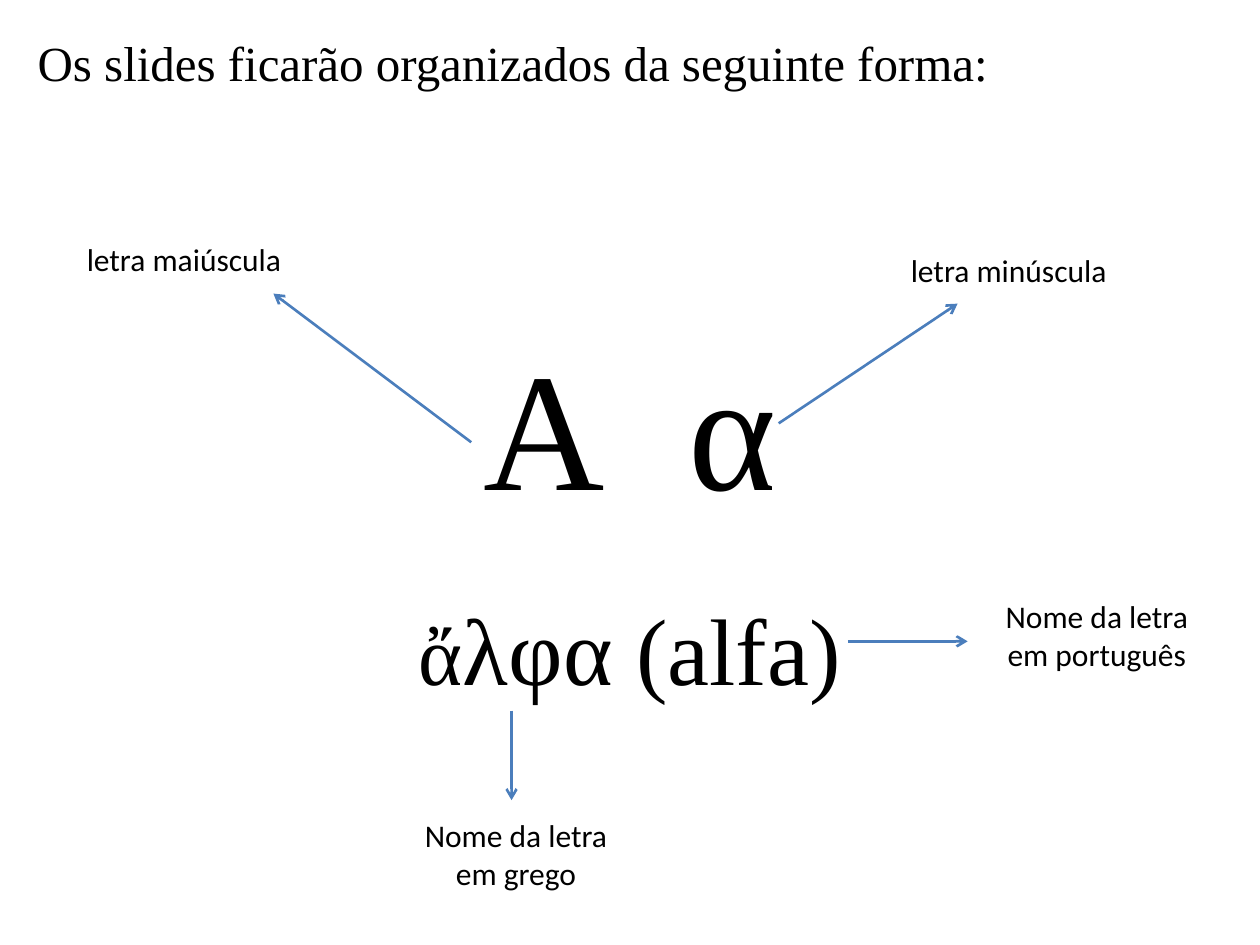
from dataclasses import dataclass

from lxml import etree
from pptx import Presentation
from pptx.dml.color import RGBColor
from pptx.enum import shapes, text
from pptx.oxml import ns
from pptx.util import Inches, Pt


@dataclass(frozen=True)
class Theme:
    ink: RGBColor = RGBColor(0x00, 0x00, 0x00)
    blue: RGBColor = RGBColor(0x4B, 0x7E, 0xBC)
    serif: str = "Times New Roman"
    sans: str = "Calibri"
    label: int = 18
    title: int = 28
    accent: int = 48
    name: int = 54
    letter: int = 96


theme = Theme()
align = text.PP_ALIGN

deck = Presentation()
deck.slide_width, deck.slide_height = Inches(10), Inches(7.5)
slide = deck.slides.add_slide(deck.slide_layouts[6])


def add_box(left, top, width, height, wrap=True):
    box = slide.shapes.add_textbox(*map(Inches, (left, top, width, height)))
    box.text_frame.word_wrap = wrap
    return box.text_frame


def add_run(para, words, size, face):
    run = para.add_run()
    run.text = words
    run.font.size = Pt(size)
    run.font.name = face
    run.font.color.rgb = theme.ink
    return run


# Letter pair and its name
frame = add_box(0.5, 1.75, 9, 4.95)
frame.margin_top = Inches(0.81)
pair = frame.paragraphs[0]
pair.alignment = align.CENTER
add_run(pair, "Α", theme.letter, theme.serif)
gap = add_run(pair, " ", theme.letter, theme.serif)
gap.font._element.set("spc", "2400")  # widens the space to two
add_run(pair, "α", theme.letter, theme.serif)

name = frame.add_paragraph()
name.alignment = align.CENTER
name.space_before = Pt(38)
add_run(name, "ἄ", theme.accent, theme.serif)
add_run(name, "λφα (alfa)", theme.name, theme.serif)

# Labels
labels = [
    ("letra maiúscula", (0.59, 1.86, 2.05, 0.4), align.LEFT),
    ("letra minúscula", (7.13, 1.94, 2.05, 0.4), align.LEFT),
    ("Nome da letra em grego", (3.19, 6.43, 1.81, 0.71), align.CENTER),
    ("Nome da letra em português", (7.76, 4.69, 1.89, 0.71), align.CENTER),
]
for words, place, side in labels:
    para = add_box(*place).paragraphs[0]
    para.alignment = side
    add_run(para, words, theme.label, theme.sans)

# Title
title = add_box(0.2, 0.21, 7.82, 0.57, wrap=False).paragraphs[0]
title.alignment = align.JUSTIFY
add_run(title, "Os slides ficarão organizados da seguinte forma:",
        theme.title, theme.serif)

# Arrows from the letters to their labels
arrows = [
    (3.74, 3.51, 2.17, 2.33),
    (6.18, 3.36, 7.6, 2.41),
    (4.06, 5.64, 4.06, 6.35),
    (6.73, 5.09, 7.68, 5.09),
]
for ends in arrows:
    arrow = slide.shapes.add_connector(
        shapes.MSO_CONNECTOR.STRAIGHT, *map(Inches, ends))
    arrow.line.color.rgb = theme.blue
    arrow.line.width = Pt(1.5)
    props = arrow._element.spPr
    etree.SubElement(props.find(ns.qn("a:ln")), ns.qn("a:tailEnd"), type="arrow")
    etree.SubElement(props, ns.qn("a:effectLst"))

deck.save("out.pptx")
